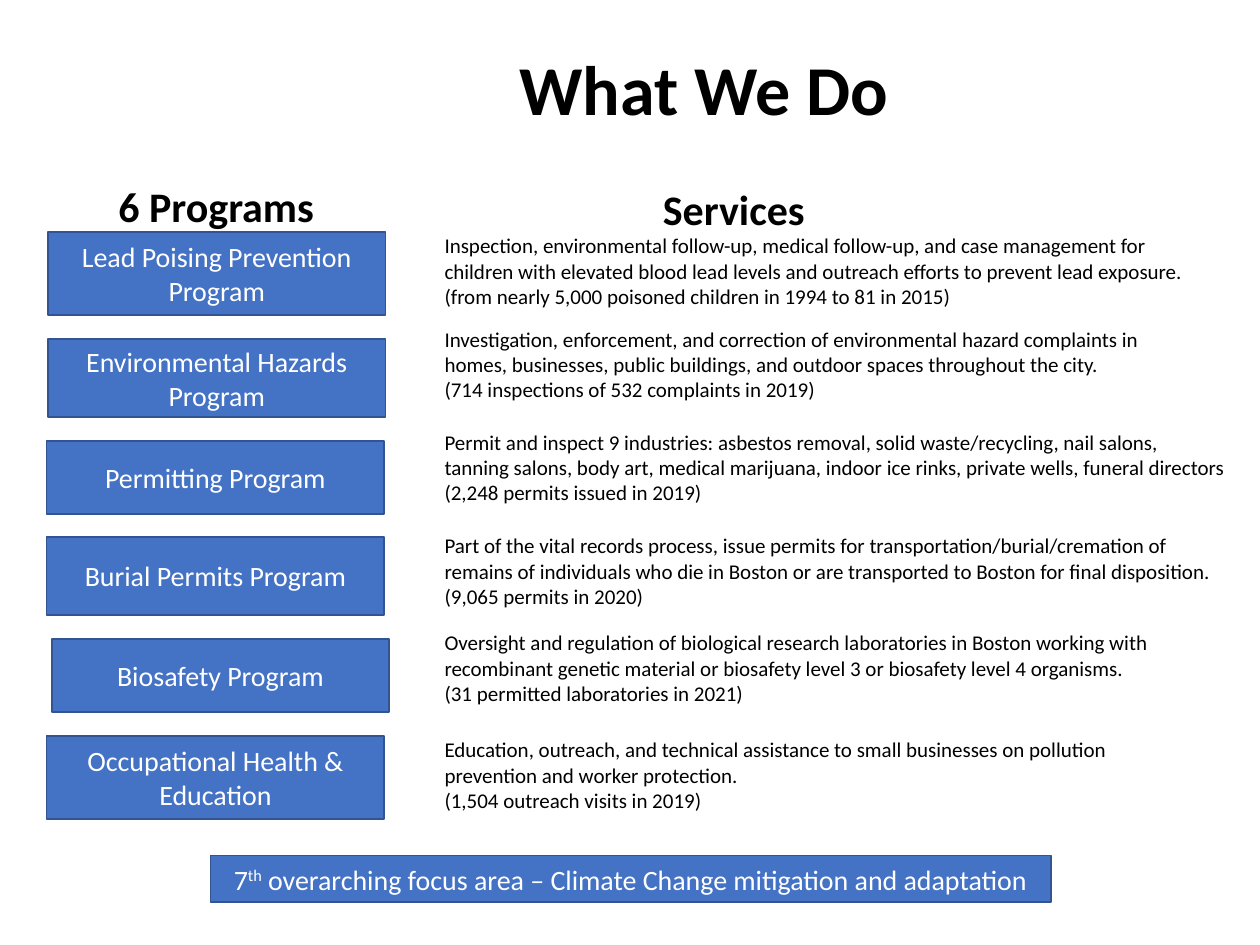
from pptx import Presentation
from pptx.dml.color import RGBColor
from pptx.enum.shapes import MSO_SHAPE
from pptx.enum.text import MSO_ANCHOR, PP_ALIGN
from pptx.util import Inches, Pt

RECTANGLE = MSO_SHAPE.RECTANGLE
MIDDLE = MSO_ANCHOR.MIDDLE
CENTER = PP_ALIGN.CENTER
LEFT = PP_ALIGN.LEFT

BLACK = RGBColor(0x00, 0x00, 0x00)
WHITE = RGBColor(0xFF, 0xFF, 0xFF)
BLUE = RGBColor(0x44, 0x72, 0xC4)
DARK_BLUE = RGBColor(0x32, 0x54, 0x91)

presentation = Presentation()
presentation.slide_width = Inches(10)
presentation.slide_height = Inches(7.5)
slide = presentation.slides.add_slide(presentation.slide_layouts[6])


def write_text(shape, lines, size, color, alignment, bold=False):
    text_frame = shape.text_frame
    text_frame.word_wrap = True
    text_frame.text = "\n".join(lines)
    for paragraph in text_frame.paragraphs:
        paragraph.alignment = alignment
        for run in paragraph.runs:
            run.font.name = "Calibri"
            run.font.size = Pt(size)
            run.font.bold = bold
            run.font.color.rgb = color


def add_blue_box(left, top, width, height, label):
    shape = slide.shapes.add_shape(
        RECTANGLE, Inches(left), Inches(top), Inches(width), Inches(height)
    )
    shape.shadow.inherit = False
    shape.fill.solid()
    shape.fill.fore_color.rgb = BLUE
    shape.line.color.rgb = DARK_BLUE
    shape.line.width = Pt(1)
    shape.text_frame.vertical_anchor = MIDDLE
    write_text(shape, [label], 16, WHITE, CENTER)
    return shape


headings = [
    ("What We Do", 1.25, 0.31, 8.67, 0.77, 40),
    ("6 Programs", 0.77, 1.38, 1.89, 0.5, 24),
    ("Services", 4.56, 1.41, 2.53, 0.5, 24),
]
for heading, left, top, width, height, size in headings:
    heading_box = slide.shapes.add_textbox(
        Inches(left), Inches(top), Inches(width), Inches(height)
    )
    write_text(heading_box, [heading], size, BLACK, CENTER, bold=True)

programs = [
    ("Lead Poising Prevention Program", 0.38, 1.84, 0.66, 1.8, 6.16,
     "Inspection, environmental follow-up, medical follow-up, and case management for "
     "children with elevated blood lead levels and outreach efforts to prevent lead exposure.",
     "(from nearly 5,000 poisoned children in 1994 to 81 in 2015)"),
    ("Environmental Hazards Program", 0.38, 2.69, 0.62, 2.54, 6.16,
     "Investigation, enforcement, and correction of environmental hazard complaints in "
     "homes, businesses, public buildings, and outdoor spaces throughout the city.",
     "(714 inspections of 532 complaints in 2019)"),
    ("Permitting Program", 0.37, 3.5, 0.58, 3.36, 6.4,
     "Permit and inspect 9 industries: asbestos removal, solid waste/recycling, nail salons, "
     "tanning salons, body art, medical marijuana, indoor ice rinks, private wells, funeral directors",
     "(2,248 permits issued in 2019)"),
    ("Burial Permits Program", 0.37, 4.26, 0.62, 4.18, 6.48,
     "Part of the vital records process, issue permits for transportation/burial/cremation of "
     "remains of individuals who die in Boston or are transported to Boston for final disposition.",
     "(9,065 permits in 2020)"),
    ("Biosafety Program", 0.41, 5.07, 0.58, 4.95, 6.16,
     "Oversight and regulation of biological research laboratories in Boston working with "
     "recombinant genetic material or biosafety level 3 or biosafety level 4 organisms.",
     "(31 permitted laboratories in 2021)"),
    ("Occupational Health & Education", 0.37, 5.84, 0.66, 5.8, 6.16,
     "Education, outreach, and technical assistance to small businesses on pollution "
     "prevention and worker protection.",
     "(1,504 outreach visits in 2019)"),
]
for program, left, top, height, service_top, service_width, service, result in programs:
    add_blue_box(left, top, 2.68, height, program)
    service_box = slide.shapes.add_textbox(
        Inches(3.43), Inches(service_top), Inches(service_width), Inches(0.71)
    )
    write_text(service_box, [service, result], 12, BLACK, LEFT)

focus_box = add_blue_box(1.67, 6.79, 6.67, 0.37, "7")
focus_paragraph = focus_box.text_frame.paragraphs[0]
for text in ("th", " overarching focus area – Climate Change mitigation and adaptation"):
    run = focus_paragraph.add_run()
    run.text = text
    run.font.name = "Calibri"
    run.font.size = Pt(16)
    run.font.color.rgb = WHITE
focus_paragraph.runs[1]._r.get_or_add_rPr().set("baseline", "30000")

presentation.save("out.pptx")
